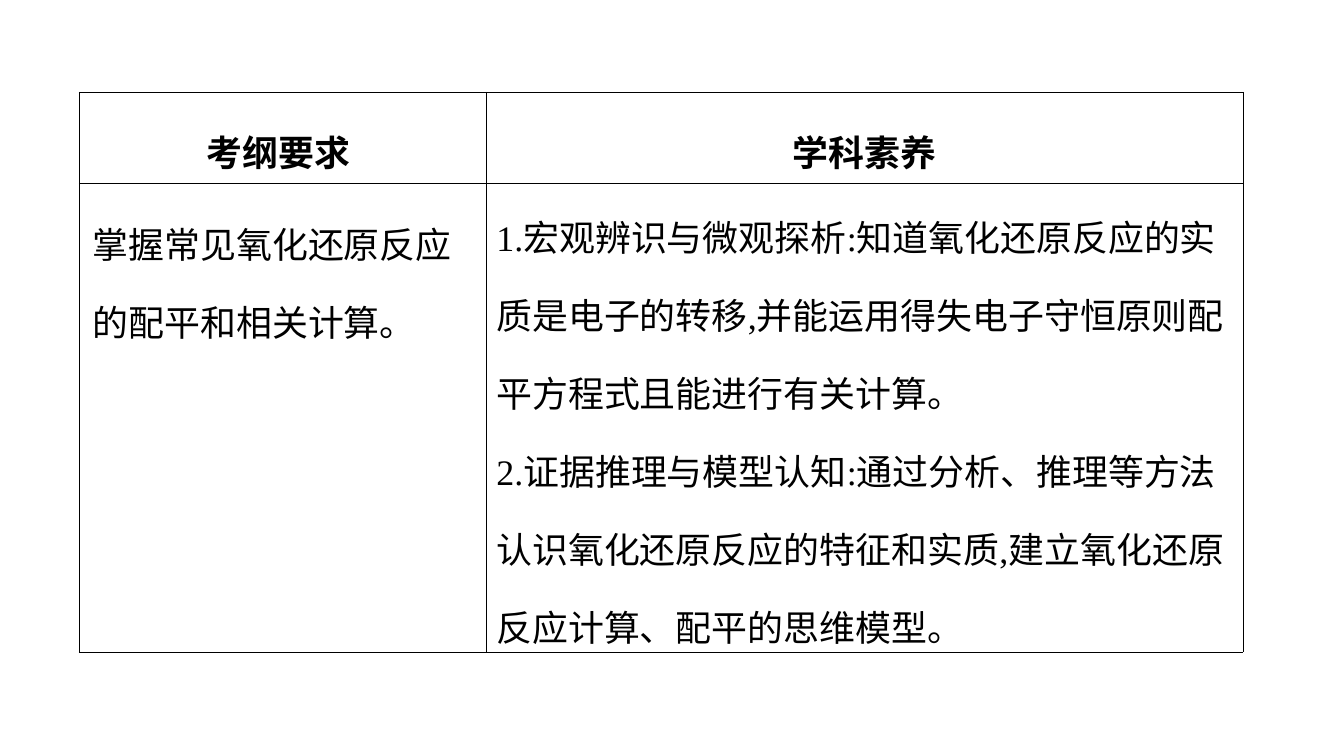
import pptx
import pptx.dml.color
import pptx.enum.text
import pptx.oxml
import pptx.oxml.ns
import pptx.util

Pt = pptx.util.Pt
Align = pptx.enum.text.PP_ALIGN
Anchor = pptx.enum.text.MSO_ANCHOR

BLACK = pptx.dml.color.RGBColor(0, 0, 0)
WHITE = pptx.dml.color.RGBColor(255, 255, 255)
FONT = "Times New Roman"
COLUMN_SHARES = (0.35, 0.65)
ROW_SHARES = (0.17, 0.83)

HEADINGS = ("考纲要求 ", "学科素养")
REQUIREMENT = "掌握常见氧化还原反应的配平和相关计算。"
COMPETENCIES = "\n".join((
    "1.宏观辨识与微观探析:知道氧化还原反应的实质是电子的转移,并能运用得失电子守恒原则配平方程式且能进行有关计算。",
    "2.证据推理与模型认知:通过分析、推理等方法认识氧化还原反应的特征和实质,建立氧化还原反应计算、配平的思维模型。",
))


def draw_borders(cell):
    properties = cell._tc.get_or_add_tcPr()
    for side in ("lnL", "lnR", "lnT", "lnB"):
        properties.append(pptx.oxml.parse_xml(
            f'<a:{side} {pptx.oxml.ns.nsdecls("a")} w="{Pt(1)}">'
            f'<a:solidFill><a:srgbClr val="{BLACK}"/></a:solidFill></a:{side}>'
        ))


def fill_cell(cell, text, align=Align.LEFT, bold=False, anchor=Anchor.TOP, side=18.72, edge=9.36):
    draw_borders(cell)
    cell.fill.solid()
    cell.fill.fore_color.rgb = WHITE
    cell.vertical_anchor = anchor
    cell.margin_left = cell.margin_right = Pt(side)
    cell.margin_top = cell.margin_bottom = Pt(edge)
    cell.text_frame.text = text
    for para in cell.text_frame.paragraphs:
        para.alignment = align
        para.line_spacing = 1.5
        for span in para.runs:
            span.font.name = FONT
            span.font.size = Pt(50)
            span.font.bold = bold
            span.font.color.rgb = BLACK


def add_syllabus_table(page, left, top, width, height):
    frame = page.shapes.add_table(2, 2, Pt(left), Pt(top), Pt(width), Pt(height))
    table = frame.table
    table.first_row = table.horz_banding = False
    for column, share in zip(table.columns, COLUMN_SHARES):
        column.width = Pt(width * share)
    for row, share in zip(table.rows, ROW_SHARES):
        row.height = Pt(height * share)
    for index, heading in enumerate(HEADINGS):
        fill_cell(table.cell(0, index), heading, align=Align.CENTER, bold=True)
    fill_cell(table.cell(1, 0), REQUIREMENT)
    fill_cell(table.cell(1, 1), COMPETENCIES, anchor=Anchor.MIDDLE, side=13.68, edge=0)


def main():
    deck = pptx.Presentation()
    deck.slide_width = Pt(1871.28)
    deck.slide_height = Pt(1049.04)
    page = deck.slides.add_slide(deck.slide_layouts[6])
    add_syllabus_table(page, left=110.16, top=128.5, width=1620.72, height=671.04)
    deck.save("out.pptx")


if __name__ == "__main__":
    main()
